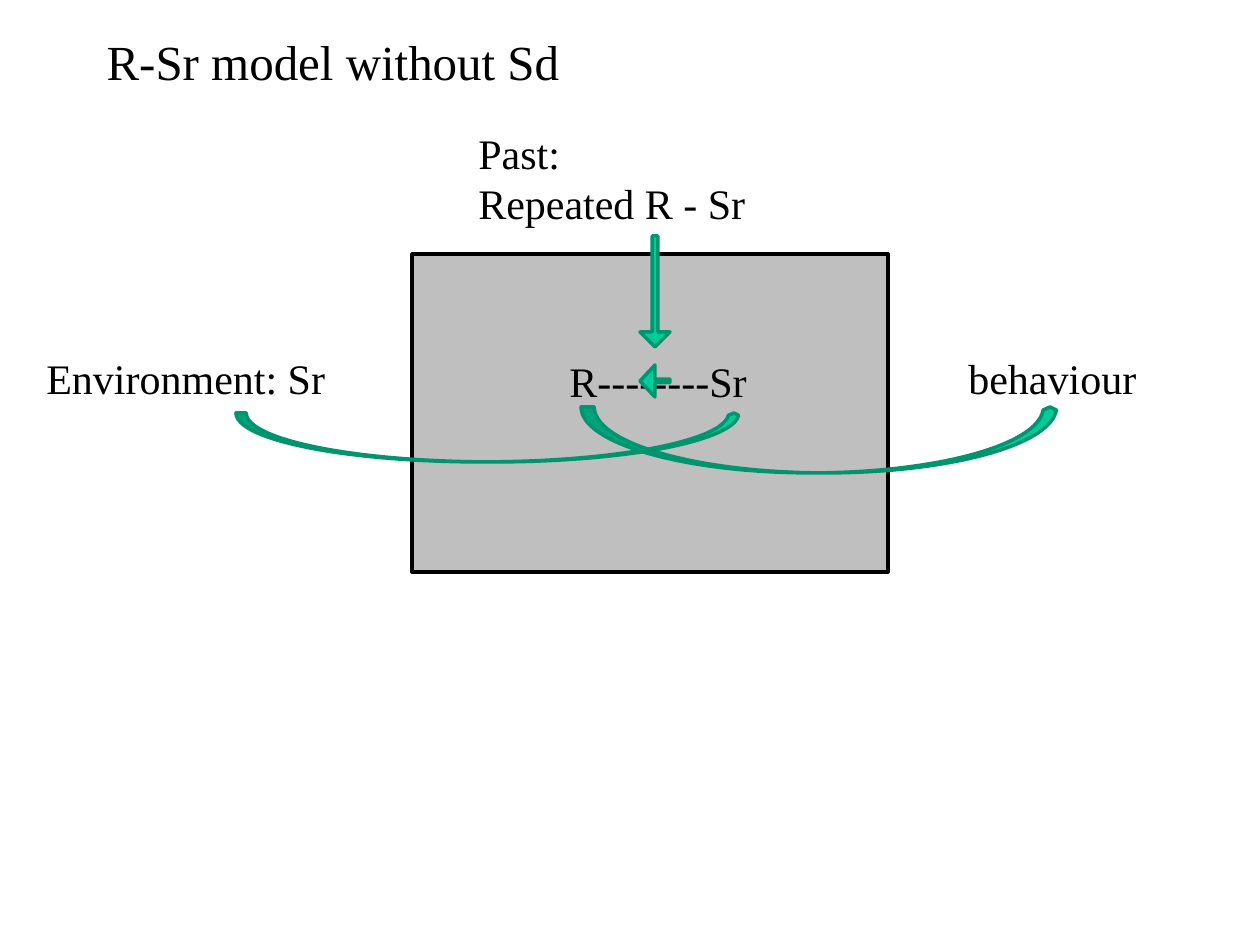
from pptx import Presentation
from pptx.dml.color import RGBColor
from pptx.enum.shapes import MSO_SHAPE
from pptx.enum.text import MSO_ANCHOR, MSO_AUTO_SIZE, PP_ALIGN
from pptx.util import Emu, Pt

RECT = MSO_SHAPE.RECTANGLE
DOWN = MSO_SHAPE.DOWN_ARROW
LEFT = MSO_SHAPE.LEFT_ARROW
CURVED = MSO_SHAPE.CURVED_UP_ARROW

PX = 914400 // 126  # EMU per px
THEME = {
    "font": "Times New Roman", "title": 28, "label": 24, "line": 2,
    "text": "000000", "box": ("BFBFBF", "000000"), "arrow": ("00CC99", "00956F"),
}

# Boxes are left, top, width, height in px
TITLE = ("R-Sr model without Sd", (94, 32, 1121, 809))

# Back to front: a label has lines of text, a shape has a preset, colours and adjustments
LABEL, SHAPE = "label", "shape"
ITEMS = [
    (LABEL, (34, 346, 318, 64), ["Environment: Sr"]),
    (LABEL, (956, 346, 209, 64), ["behaviour"]),
    (SHAPE, (412, 254, 476, 318), (RECT, "box", [])),
    (LABEL, (466, 121, 368, 115), ["Past:", "Repeated R - Sr"]),
    (SHAPE, (640, 236, 30, 111), (DOWN, "arrow", [0.19, 0.5])),
    (LABEL, (557, 349, 206, 64), ["R--------Sr"]),
    (SHAPE, (236, 413, 503, 49), (CURVED, "arrow", [0.21, 0.21, 0.05])),
    (SHAPE, (581, 407, 476, 66), (CURVED, "arrow", [0.2, 0.21, 0.05])),
    (SHAPE, (640, 365, 30, 32), (LEFT, "arrow", [0.11, 0.5])),
]


def emu(box):
    return [Emu(v * PX) for v in box]


def write(tf, lines, size):
    tf.word_wrap = True
    tf.auto_size = MSO_AUTO_SIZE.NONE
    tf.vertical_anchor = MSO_ANCHOR.TOP
    for i, line in enumerate(lines):
        p = tf.add_paragraph() if i else tf.paragraphs[0]
        p.alignment = PP_ALIGN.LEFT
        r = p.add_run()
        r.text = line
        r.font.name = THEME["font"]
        r.font.size = Pt(size)
        r.font.color.rgb = RGBColor.from_string(THEME["text"])


def add_title(s, text, box):
    sp = s.shapes.title
    sp.left, sp.top, sp.width, sp.height = emu(box)
    write(sp.text_frame, [text], THEME["title"])
    sp.text_frame.paragraphs[0].line_spacing = 0.9


def add_label(s, box, lines):
    write(s.shapes.add_textbox(*emu(box)).text_frame, lines, THEME["label"])


def add_preset(s, box, look):
    preset, colours, adjustments = look
    fill, line = THEME[colours]
    sp = s.shapes.add_shape(preset, *emu(box))
    sp.shadow.inherit = False
    for i, value in enumerate(adjustments):
        sp.adjustments[i] = value
    sp.fill.solid()
    sp.fill.fore_color.rgb = RGBColor.from_string(fill)
    sp.line.color.rgb = RGBColor.from_string(line)
    sp.line.width = Pt(THEME["line"])


def main():
    prs = Presentation()
    prs.slide_width, prs.slide_height = emu((1260, 945))
    s = prs.slides.add_slide(prs.slide_layouts[5])
    add_title(s, *TITLE)
    draw = {LABEL: add_label, SHAPE: add_preset}
    for kind, box, content in ITEMS:
        draw[kind](s, box, content)
    prs.save("out.pptx")


if __name__ == "__main__":
    main()
